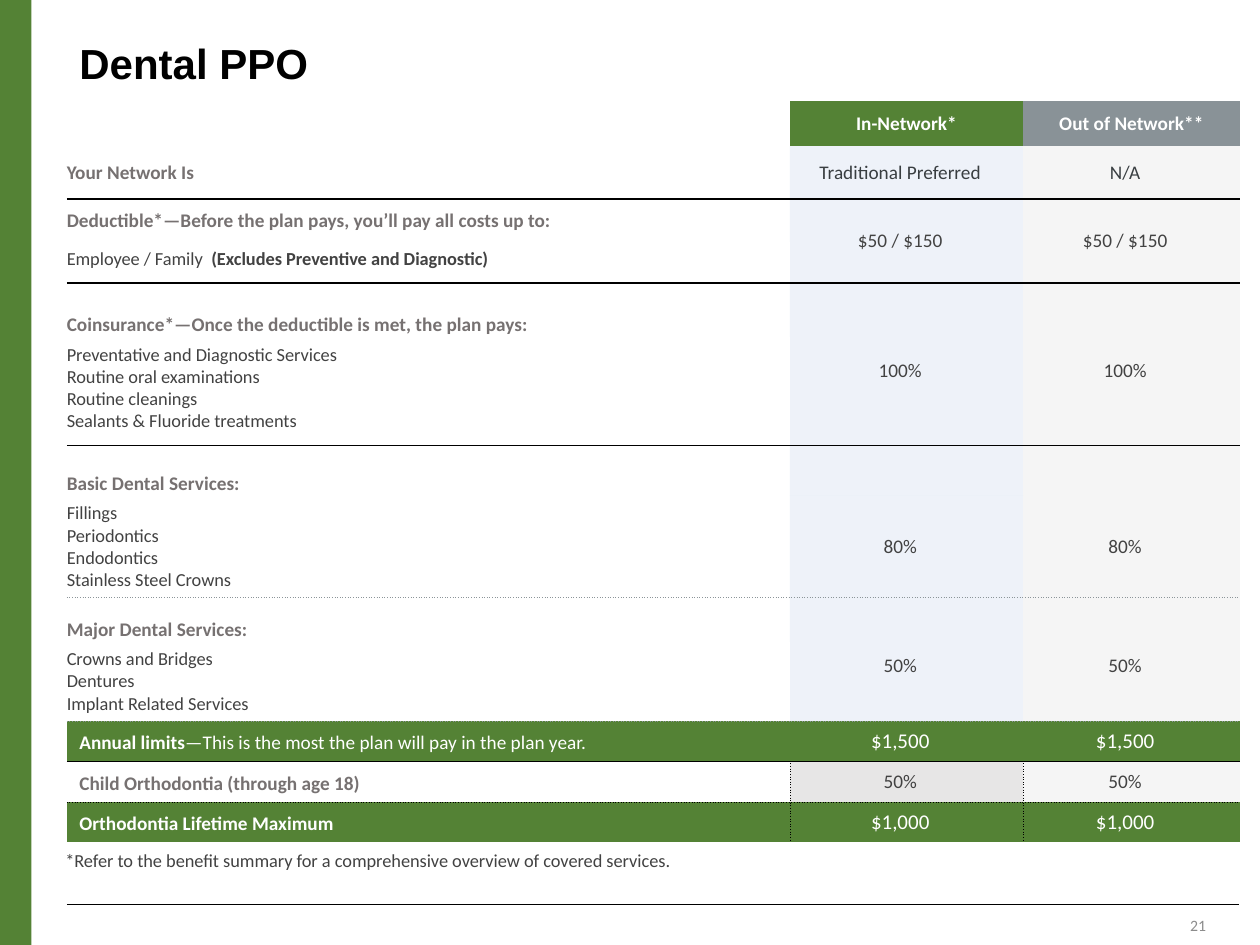
from dataclasses import dataclass
from lxml import etree
from pptx import Presentation
from pptx.dml.color import RGBColor
from pptx.enum.shapes import MSO_CONNECTOR, MSO_SHAPE
from pptx.enum.text import MSO_ANCHOR, PP_ALIGN
from pptx.oxml.ns import qn
from pptx.util import Inches, Pt

LEFT, CENTER, RIGHT = PP_ALIGN.LEFT, PP_ALIGN.CENTER, PP_ALIGN.RIGHT
TOP, MIDDLE, BOTTOM = MSO_ANCHOR.TOP, MSO_ANCHOR.MIDDLE, MSO_ANCHOR.BOTTOM
RECT, STRAIGHT = MSO_SHAPE.RECTANGLE, MSO_CONNECTOR.STRAIGHT
NO_GRID = "{2D5ABB26-0587-4C30-8999-92F81FD0307C}"


@dataclass(frozen=True)
class Theme:
    head: str = "Arial"
    body: str = "Calibri"
    black: str = "000000"
    white: str = "FFFFFF"
    green: str = "548235"
    slate: str = "899297"
    blue: str = "DAE3F3"
    pale: str = "F5F5F5"
    grey: str = "E7E6E6"
    label: str = "767171"
    name: str = "393E41"
    text: str = "424242"
    rule: str = "8C9599"
    page: str = "8C8C8C"
    title: float = 24
    large: float = 12
    mid: float = 11
    small: float = 10.5
    tiny: float = 9


T = Theme()
COLS = (5.74, 1.85, 1.72)

# Rules: colour, width in points, dash
SOLID = (T.black, 1, "solid")
DOTS = (T.rule, 0.5, "sysDot")
HAIR = (T.black, 0.25, "sysDot")

# Type styles: size, colour, bold
HEAD = (T.mid, T.label, True)
ITEM = (T.small, T.text, False)
NOTE = (T.small, T.text, True)
BAND = (T.mid, T.white, True)
THIN = (T.mid, T.white, False)
CELL = (T.mid, T.text, False)
NAME = (T.mid, T.name, False)
SUM = (T.large, T.white, False)

# Cell insets: left, top, right, bottom
NONE = (0, 0, 0, 0)
FLAT = (0, 0, 0.1, 0)
DROP = (0, 0.1, 0.1, 0)
LIST = (0, 0.05, 0.1, 0.1)
SLIM = (0, 0.05, 0.1, 0.05)
WIDE = (0.1, 0.05, 0.1, 0.05)

# Row fills for the three columns
TOPS = (T.white, T.green, T.slate)
PLAN = (T.white, T.blue, T.pale)
FULL = (T.green,) * 3
CHILD = (T.white, T.grey, T.pale)


def lines(style, *texts):
    return [[(text, style)] for text in texts]


# Height, label, label inset, label anchor, values, value style, value inset, fills, rule below
ROWS = [
    (0.36, [], NONE, MIDDLE, ("In-Network*", "Out of Network**"), BAND, NONE, TOPS, None),
    (0.42, lines(HEAD, "Your Network Is"), FLAT, MIDDLE,
     ("Traditional Preferred", "N/A"), NAME, FLAT, PLAN, SOLID),
    (0.34, lines(HEAD, "Deductible*—Before the plan pays, you’ll pay all costs up to:"),
     FLAT, MIDDLE, ("$50 / $150",) * 2, CELL, FLAT, PLAN, None),
    (0.32, [[("Employee / Family  ", ITEM), ("(Excludes Preventive and Diagnostic)", NOTE)]],
     LIST, BOTTOM, None, CELL, FLAT, PLAN, SOLID),
    (0.43, lines(HEAD, "Coinsurance*—Once the deductible is met, the plan pays:"),
     DROP, BOTTOM, ("100%",) * 2, CELL, DROP, PLAN, None),
    (0.86, lines(ITEM, "Preventative and Diagnostic Services", "Routine oral examinations",
                 "Routine cleanings", "Sealants & Fluoride treatments"),
     LIST, BOTTOM, None, CELL, DROP, PLAN, SOLID),
    (0.32, lines(HEAD, "Basic Dental Services:"), DROP, BOTTOM, ("", ""), CELL, DROP, PLAN, None),
    (0.81, lines(ITEM, "Fillings", "Periodontics", "Endodontics", "Stainless Steel Crowns"),
     SLIM, BOTTOM, ("80%",) * 2, CELL, SLIM, PLAN, DOTS),
    (0.35, lines(HEAD, "Major Dental Services:"), DROP, BOTTOM,
     ("50%",) * 2, CELL, DROP, PLAN, None),
    (0.63, lines(ITEM, "Crowns and Bridges", "Dentures", "Implant Related Services"),
     SLIM, BOTTOM, None, CELL, DROP, PLAN, DOTS),
    (0.32, [[("Annual limits", BAND),
             ("—This is the most the plan will pay in the plan year.", THIN)]],
     WIDE, BOTTOM, ("$1,500",) * 2, SUM, SLIM, FULL, SOLID),
    (0.32, lines(HEAD, "Child Orthodontia (through age 18)"), WIDE, BOTTOM,
     ("50%",) * 2, CELL, SLIM, CHILD, HAIR),
    (0.32, lines(BAND, "Orthodontia Lifetime Maximum"), WIDE, BOTTOM,
     ("$1,000",) * 2, SUM, SLIM, FULL, None),
]
SPLIT = (11, 12)  # rows with dotted column rules


def rgb(code):
    return RGBColor.from_string(code)


def style_font(font, style, face=T.body):
    size, color, bold = style
    font.name, font.size, font.bold = face, Pt(size), bold
    font.color.rgb = rgb(color)


def add_text(slide, box, text, style, align=LEFT, anchor=TOP):
    frame = slide.shapes.add_textbox(*map(Inches, box)).text_frame
    frame.word_wrap, frame.vertical_anchor = True, anchor
    para = frame.paragraphs[0]
    para.text, para.alignment = text, align
    style_font(para.font, style)


def add_rule(slide, left, right, y):
    line = slide.shapes.add_connector(
        STRAIGHT, Inches(left), Inches(y), Inches(right), Inches(y))
    line.line.color.rgb, line.line.width = rgb(T.black), Pt(0.5)
    etree.SubElement(line._element.spPr, qn("a:effectLst"))


def fill_cell(cell, paras, inset, anchor, align, color):
    cell.margin_left, cell.margin_top, cell.margin_right, cell.margin_bottom = map(Inches, inset)
    cell.vertical_anchor = anchor
    cell.fill.solid()
    cell.fill.fore_color.rgb = rgb(color)
    if color == T.blue:
        tone = cell._tc.tcPr.find(".//" + qn("a:srgbClr"))
        etree.SubElement(tone, qn("a:alpha"), val="44000")
    frame = cell.text_frame
    for i, runs in enumerate(paras):
        para = frame.add_paragraph() if i else frame.paragraphs[0]
        para.alignment = align
        for text, style in runs:
            run = para.add_run()
            run.text = text
            style_font(run.font, style)


def edge_cell(cell, edges):
    """Draw edges given in left, right, top, bottom order."""
    props = cell._tc.get_or_add_tcPr()
    for i, (side, rule) in enumerate(zip("LRTB", edges)):
        width = rule[1] if rule else 0
        line = etree.Element(qn("a:ln" + side), w=str(Pt(width)))
        if rule:
            solid = etree.SubElement(line, qn("a:solidFill"))
            etree.SubElement(solid, qn("a:srgbClr"), val=rule[0])
            etree.SubElement(line, qn("a:prstDash"), val=rule[2])
        else:
            etree.SubElement(line, qn("a:noFill"))
        props.insert(i, line)


def add_plan(slide):
    frame = slide.shapes.add_table(
        len(ROWS), len(COLS), Inches(0.53), Inches(0.8),
        Inches(sum(COLS)), Inches(sum(row[0] for row in ROWS)))
    table = frame.table
    table.first_row = table.horz_banding = False
    table._tbl.tblPr.find(qn("a:tableStyleId")).text = NO_GRID
    for col, width in zip(table.columns, COLS):
        col.width = Inches(width)
    above = None
    for r, (high, label, inset, anchor, vals, style, pad, fills, below) in enumerate(ROWS):
        table.rows[r].height = Inches(high)
        fill_cell(table.cell(r, 0), label, inset, anchor, LEFT, fills[0])
        for c in (1, 2):
            paras = lines(style, vals[c - 1]) if vals else []
            fill_cell(table.cell(r, c), paras, pad, MIDDLE, CENTER, fills[c])
            if vals is None:
                table.cell(r - 1, c).merge(table.cell(r, c))
        for c in range(3):
            side = HAIR if r in SPLIT else None
            edge_cell(table.cell(r, c),
                      (side if c else None, side if c < 2 else None, above, below))
        above = below


def add_title(slide, text):
    title = slide.shapes.title
    title.left, title.top, title.width, title.height = map(Inches, (0.53, 0.29, 6.5, 0.86))
    frame = title.text_frame
    frame.vertical_anchor = TOP
    para = frame.paragraphs[0]
    para.text, para.alignment, para.line_spacing = text, LEFT, 0.9
    style_font(para.font, (T.title, T.black, True), T.head)


def add_bar(slide):
    bar = slide.shapes.add_shape(RECT, 0, 0, Inches(0.25), Inches(7.5))
    bar.shadow.inherit = False
    bar.fill.solid()
    bar.fill.fore_color.rgb = rgb(T.green)
    bar.line.fill.background()


def main():
    deck = Presentation()
    deck.slide_width, deck.slide_height = Inches(10), Inches(7.5)
    slide = deck.slides.add_slide(deck.slide_layouts[5])
    add_title(slide, "Dental PPO")
    add_bar(slide)
    # Footer
    add_text(slide, (0.42, 6.69, 9.71, 0.28),
             "*Refer to the benefit summary for a comprehensive overview of covered services.", ITEM)
    add_rule(slide, 0.53, 9.83, 7.18)
    add_text(slide, (7.42, 7.14, 2.25, 0.4), "21", (T.tiny, T.page, False), RIGHT, MIDDLE)
    # Benefits
    add_plan(slide)
    deck.save("out.pptx")


if __name__ == "__main__":
    main()
